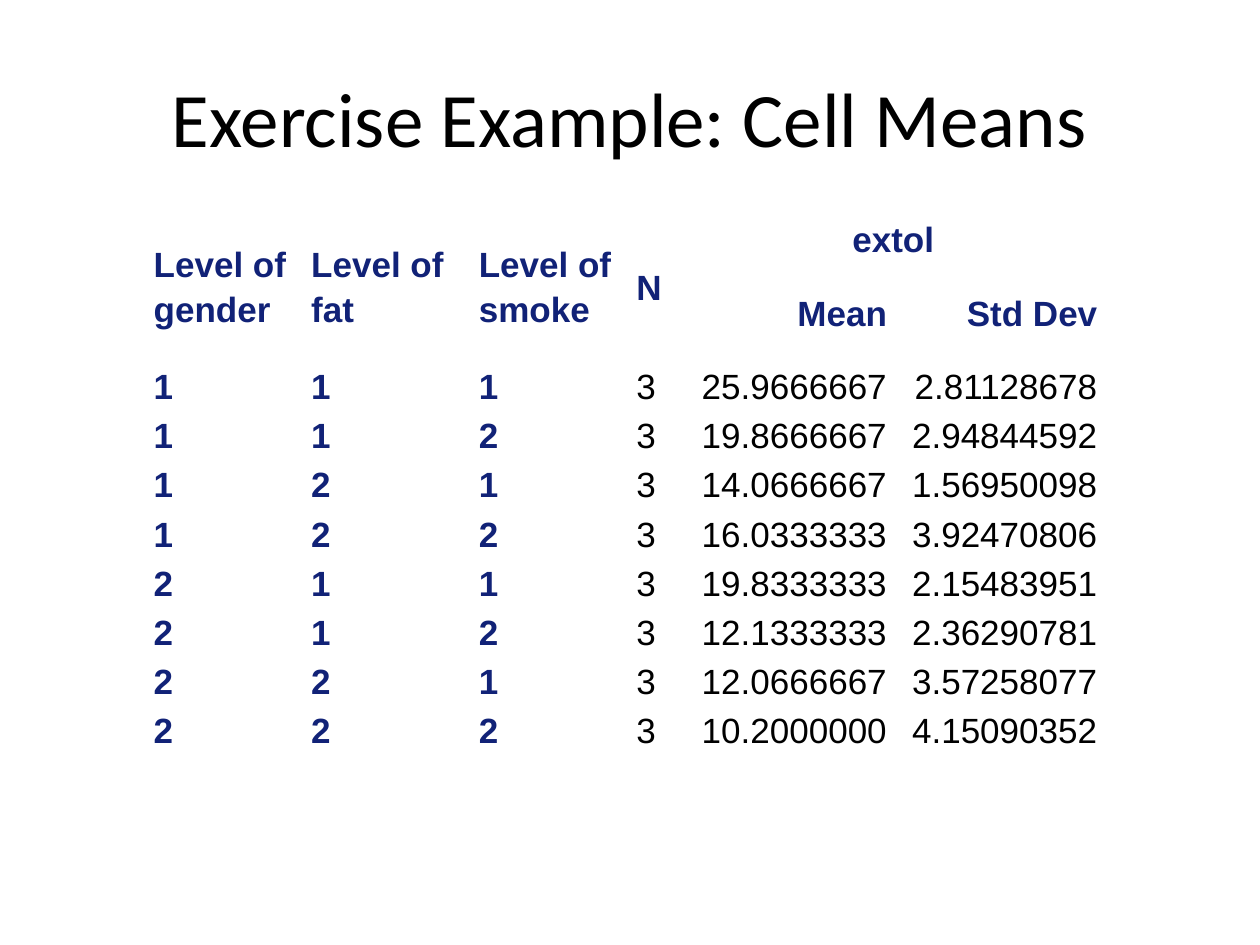
from pptx import Presentation
from pptx.dml.color import RGBColor
from pptx.enum.text import MSO_ANCHOR, PP_ALIGN
from pptx.util import Inches, Pt

NAVY, BLACK = "112277", "000000"
COLUMN_WIDTHS = [1.25, 1.33, 1.25, 0.42, 1.67, 1.67]
HEADER_HEIGHTS = [0.42, 0.71]
DATA_HEIGHT = 0.39
LEVEL_COLUMNS = 3
FIRST_NUMBER_COLUMN = 4
HEADERS = [
    ["Level of\ngender", "Level of\nfat", "Level of\nsmoke", "N", "extol", None],
    [None, None, None, None, "Mean", "Std Dev"],
]
CELL_MEANS = [
    ["1", "1", "1", "3", "25.9666667", "2.81128678"],
    ["1", "1", "2", "3", "19.8666667", "2.94844592"],
    ["1", "2", "1", "3", "14.0666667", "1.56950098"],
    ["1", "2", "2", "3", "16.0333333", "3.92470806"],
    ["2", "1", "1", "3", "19.8333333", "2.15483951"],
    ["2", "1", "2", "3", "12.1333333", "2.36290781"],
    ["2", "2", "1", "3", "12.0666667", "3.57258077"],
    ["2", "2", "2", "3", "10.2000000", "4.15090352"],
]


def style_paragraph(paragraph, text, font_name, size, color, bold, alignment):
    """Write a paragraph with one font throughout."""
    paragraph.text = text
    paragraph.alignment = alignment
    font = paragraph.font
    font.name, font.size, font.bold = font_name, Pt(size), bold
    font.color.rgb = RGBColor.from_string(color)


def add_title(presentation, slide, text):
    """Add a centred title across the top of the slide."""
    width, height = presentation.slide_width, presentation.slide_height
    shape = slide.shapes.add_textbox(
        int(width * 0.05), int(height * 0.04), int(width * 0.9), Inches(1.25)
    )
    frame = shape.text_frame
    frame.word_wrap = True
    frame.vertical_anchor = MSO_ANCHOR.MIDDLE
    style_paragraph(
        frame.paragraphs[0], text, "Calibri", 44, BLACK, False, PP_ALIGN.CENTER
    )


def fill_cell(cell, text, color, bold, alignment):
    """Write one unfilled, vertically centred table cell."""
    cell.fill.background()
    cell.vertical_anchor = MSO_ANCHOR.MIDDLE
    cell.margin_left = cell.margin_right = Inches(0.05)
    cell.margin_top = cell.margin_bottom = 0
    paragraph = cell.text_frame.paragraphs[0]
    style_paragraph(paragraph, text or "", "Arial", 20, color, bold, alignment)
    paragraph.line_spacing = 1.15
    paragraph.space_before = paragraph.space_after = Pt(5)


def cell_alignment(text, column):
    """Return the alignment of a cell from its column and heading."""
    if text == "extol":
        return PP_ALIGN.CENTER
    return PP_ALIGN.RIGHT if column >= FIRST_NUMBER_COLUMN else PP_ALIGN.LEFT


def add_means_table(slide):
    """Add the table of cell means with its two header rows."""
    rows = HEADERS + CELL_MEANS
    heights = HEADER_HEIGHTS + [DATA_HEIGHT] * len(CELL_MEANS)
    table = slide.shapes.add_table(
        len(rows), len(COLUMN_WIDTHS), Inches(1.17), Inches(1.67),
        Inches(sum(COLUMN_WIDTHS)), Inches(sum(heights)),
    ).table
    table.first_row = table.horz_banding = False
    for column, width in zip(table.columns, COLUMN_WIDTHS):
        column.width = Inches(width)
    for row, height in zip(table.rows, heights):
        row.height = Inches(height)
    for row_index, row in enumerate(rows):
        for column, text in enumerate(row):
            heading = row_index < len(HEADERS) or column < LEVEL_COLUMNS
            fill_cell(
                table.cell(row_index, column), text,
                NAVY if heading else BLACK, heading, cell_alignment(text, column),
            )
    for column in range(FIRST_NUMBER_COLUMN):
        table.cell(0, column).merge(table.cell(1, column))
    table.cell(0, FIRST_NUMBER_COLUMN).merge(table.cell(0, FIRST_NUMBER_COLUMN + 1))


def main():
    """Build and save the slide."""
    presentation = Presentation()
    presentation.slide_width, presentation.slide_height = Inches(10), Inches(7.5)
    slide = presentation.slides.add_slide(presentation.slide_layouts[6])
    add_title(presentation, slide, "Exercise Example: Cell Means")
    add_means_table(slide)
    presentation.save("out.pptx")


if __name__ == "__main__":
    main()
